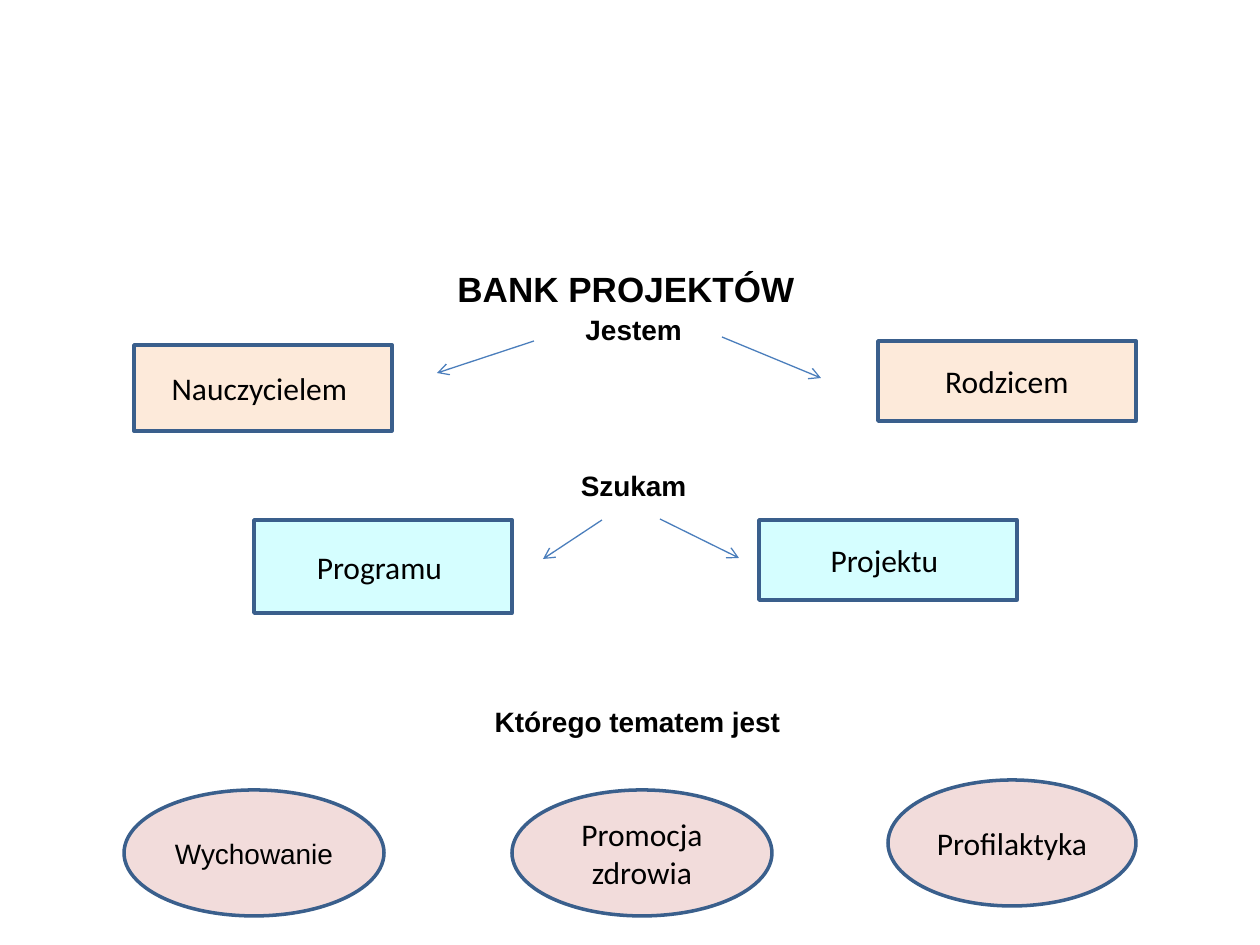
from dataclasses import dataclass

from lxml.etree import SubElement
from pptx import Presentation
from pptx.dml.color import RGBColor
from pptx.enum.shapes import MSO_CONNECTOR, MSO_SHAPE
from pptx.enum.text import MSO_ANCHOR as Anchor, PP_ALIGN as Align
from pptx.oxml.ns import qn
from pptx.util import Emu, Pt

PX = 914400 / 126
PEACH, CYAN, ROSE = "FDEADA", "D5FEFF", "F2DCDB"
OUTLINE, ARROW, BLACK = "3A5F8C", "4B7EBC", "000000"


@dataclass
class Node:
    """A filled shape with one caption."""
    text: str
    x: int
    y: int
    w: int
    h: int
    fill: str
    kind: MSO_SHAPE = MSO_SHAPE.RECTANGLE
    font: str = "Calibri"
    size: int = 18


@dataclass
class Arrow:
    """A thin arrow from one point to another."""
    x1: int
    y1: int
    x2: int
    y2: int


@dataclass
class Label:
    """A bold centred heading above a row of nodes."""
    text: str
    y: int


NODES = [
    Node("Nauczycielem ", 134, 345, 258, 86, PEACH),
    Node("Rodzicem", 878, 341, 258, 80, PEACH),
    Node("Programu ", 254, 520, 258, 93, CYAN),
    Node("Projektu ", 759, 520, 258, 80, CYAN),
    Node("Wychowanie ", 124, 790, 260, 126, ROSE, MSO_SHAPE.OVAL, "Arial", 16),
    Node("Promocja zdrowia", 512, 790, 260, 126, ROSE, MSO_SHAPE.OVAL),
    Node("Profilaktyka", 888, 780, 248, 126, ROSE, MSO_SHAPE.OVAL),
]
ARROWS = [
    Arrow(722, 337, 821, 378),
    Arrow(534, 341, 437, 373),
    Arrow(660, 519, 739, 558),
    Arrow(602, 520, 543, 559),
]
LABELS = [Label("Jestem ", 309), Label("Szukam ", 465), Label("Którego tematem jest", 701)]


def px(n: int) -> Emu:
    """Turn pixels into EMU."""
    return Emu(round(n * PX))


def rgb(value: str) -> RGBColor:
    """Turn a hex string into a colour."""
    return RGBColor.from_string(value)


def write(s, text: str, font: str, size: int, bold: bool = False) -> None:
    """Write one centred run in the middle of a shape."""
    tf = s.text_frame
    tf.word_wrap = True
    tf.vertical_anchor = Anchor.MIDDLE
    p = tf.paragraphs[0]
    p.alignment = Align.CENTER
    r = p.add_run()
    r.text = text
    r.font.name, r.font.size, r.font.bold = font, Pt(size), bold
    r.font.color.rgb = rgb(BLACK)


def draw_title(slide, text: str) -> None:
    """Place and fill the title placeholder."""
    s = slide.shapes.title
    s.left, s.top, s.width, s.height = px(26), px(253), px(1200), px(70)
    write(s, text, "Arial", 20, True)


def draw_label(slide, label: Label) -> None:
    """Draw a heading across the slide."""
    s = slide.shapes.add_textbox(px(15), px(label.y), px(1245), px(40))
    write(s, label.text, "Arial", 16, True)


def draw_node(slide, node: Node) -> None:
    """Draw an outlined shape with its caption."""
    s = slide.shapes.add_shape(node.kind, px(node.x), px(node.y), px(node.w), px(node.h))
    s.shadow.inherit = False
    s.fill.solid()
    s.fill.fore_color.rgb = rgb(node.fill)
    s.line.color.rgb = rgb(OUTLINE)
    s.line.width = Pt(2)
    write(s, node.text, node.font, node.size)


def draw_arrow(slide, arrow: Arrow) -> None:
    """Draw a connector with an open arrowhead at its end."""
    s = slide.shapes.add_connector(
        MSO_CONNECTOR.STRAIGHT, px(arrow.x1), px(arrow.y1), px(arrow.x2), px(arrow.y2))
    s.line.color.rgb = rgb(ARROW)
    s.line.width = Pt(0.75)
    SubElement(s.line._get_or_add_ln(), qn("a:tailEnd"), type="arrow")
    SubElement(s._element.spPr, qn("a:effectLst"))


def main() -> None:
    """Build and save the slide."""
    prs = Presentation()
    prs.slide_width, prs.slide_height = px(1260), px(945)
    slide = prs.slides.add_slide(prs.slide_layouts[5])
    draw_title(slide, "BANK PROJEKTÓW")
    for label in LABELS:
        draw_label(slide, label)
    for arrow in ARROWS:
        draw_arrow(slide, arrow)
    for node in NODES:
        draw_node(slide, node)
    prs.save("out.pptx")


if __name__ == "__main__":
    main()
